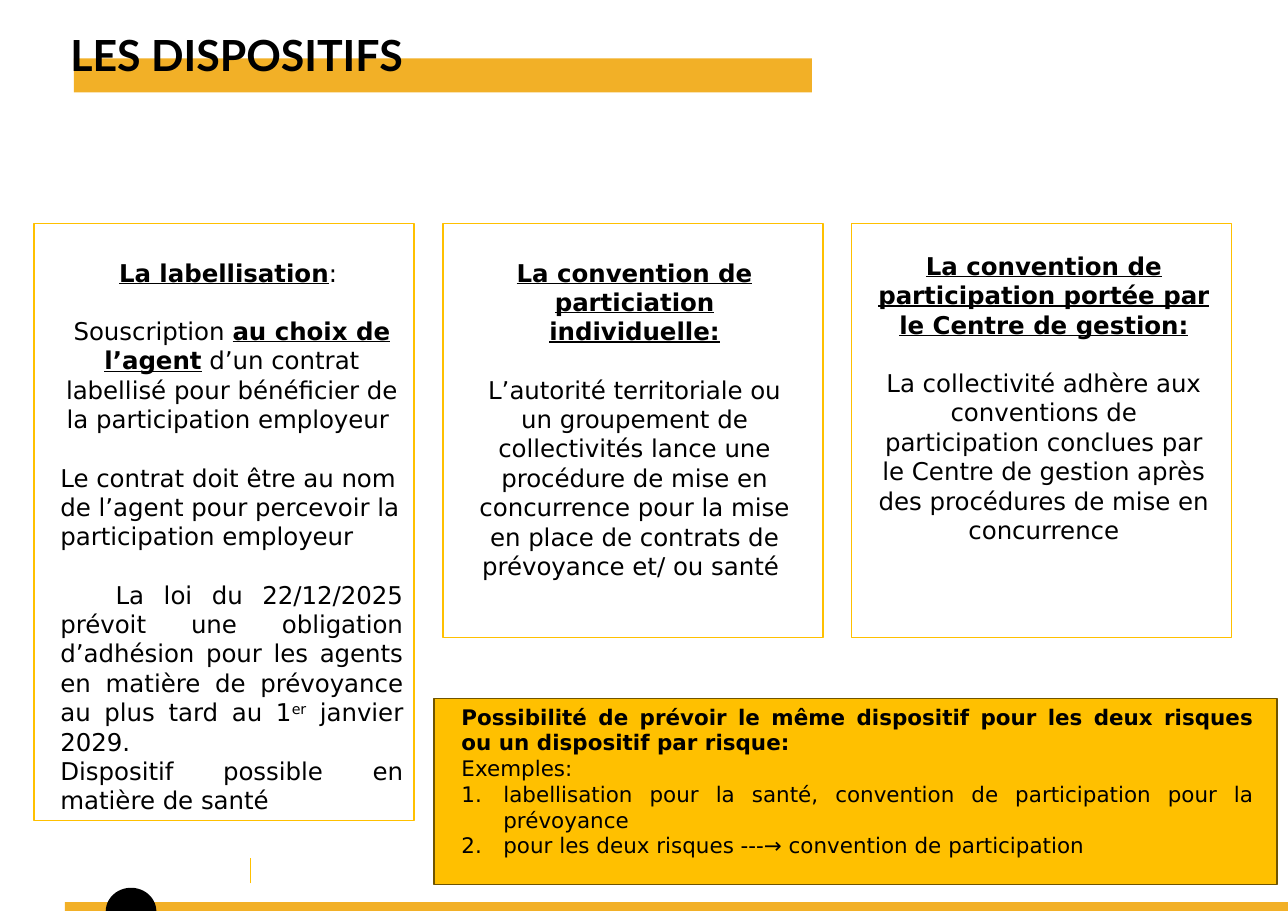
from lxml import etree
from pptx import Presentation
from pptx import util as u
from pptx.dml.color import RGBColor
from pptx.enum import shapes, text
from pptx.oxml.ns import qn

GOLD, AMBER, BLACK, WHITE = "F2B027", "FFC000", "000000", "FFFFFF"
HEAD = {"bold": True, "underline": True}
MID, FULL, LEFT = text.PP_ALIGN.CENTER, text.PP_ALIGN.JUSTIFY, text.PP_ALIGN.LEFT


def color(code):
    return RGBColor.from_string(code)


def apply(item, style):
    for key, value in style.items():
        setattr(item, key, value)


def stroke(line, code, width):
    line.color.rgb = color(code)
    line.width = u.Pt(width)


def add_block(slide, kind, box, fill, edge=None):
    block = slide.shapes.add_shape(kind, *map(u.Inches, box))
    block.shadow.inherit = False
    block.fill.solid()
    block.fill.fore_color.rgb = color(fill)
    if edge:
        stroke(block.line, edge, 1)
    else:
        block.line.fill.background()
    return block


def add_text(slide, box, paras, size, face="DejaVu Sans", pad=None):
    frame = slide.shapes.add_textbox(*map(u.Inches, box)).text_frame
    apply(frame, {"word_wrap": True, "auto_size": text.MSO_AUTO_SIZE.SHAPE_TO_FIT_TEXT})
    if pad:
        sides = ("left", "top", "right", "bottom")
        apply(frame, {f"margin_{side}": u.Inches(pad) for side in sides})
    for i, (align, runs, form) in enumerate(paras):
        para = frame.add_paragraph() if i else frame.paragraphs[0]
        props = para._p.get_or_add_pPr()
        if "indent" in form:
            props.set("indent", str(u.Inches(form["indent"])))
        if form.get("number"):
            props.set("marL", str(u.Inches(0.38)))
            props.set("indent", str(u.Inches(-0.38)))
            etree.SubElement(props, qn("a:buFont"), typeface="+mj-lt")
            etree.SubElement(props, qn("a:buAutoNum"), type="arabicPeriod")
        para.alignment = align
        if "gap" in form:
            para.space_before = u.Pt(form["gap"])
        for words, style in runs:
            run = para.add_run()
            run.text = words
            apply(run.font, {"name": face, "size": u.Pt(size), **style})
            run.font.color.rgb = color(BLACK)
            if words == "er":
                run._r.get_or_add_rPr().set("baseline", "30000")


def add_footer(slide, left, top):
    add_block(slide, shapes.MSO_SHAPE.RECTANGLE, (left, top, 11.1, 0.08), GOLD)
    dome = add_block(slide, shapes.MSO_SHAPE.CHORD,
                     (left + 0.37, top - 0.13, 0.46, 0.43), BLACK)
    dome.adjustments[0], dome.adjustments[1] = 108.37, 215.49
    x = u.Inches(left + 1.68)
    tick = slide.shapes.add_connector(shapes.MSO_CONNECTOR.STRAIGHT, x,
                                      u.Inches(top - 0.17), x, u.Inches(top - 0.4))
    stroke(tick.line, AMBER, 0.75)
    etree.SubElement(tick._element.spPr, qn("a:effectLst"))


def add_title(slide, left, top, words):
    add_block(slide, shapes.MSO_SHAPE.RECTANGLE, (left + 0.13, top + 0.37, 6.7, 0.31), GOLD)
    add_text(slide, (left, top, 7.09, 0.67), [(LEFT, [(words, {"bold": True})], {})],
             28, "Lato", 0.1)


def add_card(slide, box, inner, paras):
    add_block(slide, shapes.MSO_SHAPE.RECTANGLE, box, WHITE, AMBER)
    dx, dy, width, height = inner
    add_text(slide, (box[0] + dx, box[1] + dy, width, height), paras, 16)


def add_note(slide, box, paras):
    add_block(slide, shapes.MSO_SHAPE.RECTANGLE, box, AMBER, "705400")
    left, top, width, height = box
    add_text(slide, (left + 0.15, top, width - 0.26, height - 0.18), paras, 14)


def main():
    deck = Presentation()
    deck.slide_width, deck.slide_height = u.Inches(11.69), u.Inches(8.27)
    slide = deck.slides.add_slide(deck.slide_layouts[6])
    gap = {"gap": 19}
    label = [
        (MID, [("La labellisation", HEAD), (": ", {})], {}),
        (MID, [("Souscription ", {}), ("au choix de l’agent", HEAD),
               (" d’un contrat labellisé pour bénéficier de la participation employeur ", {})], gap),
        (LEFT, [("Le contrat doit être au nom de l’agent pour percevoir la "
                 "participation employeur", {})], gap),
        (FULL, [("La loi du 22/12/2025 prévoit une obligation d’adhésion pour les agents "
                 "en matière de prévoyance au plus tard au 1", {}),
                ("er", {}), (" janvier 2029. ", {})], {"gap": 19, "indent": 0.5}),
        (FULL, [("Dispositif possible en matière de santé ", {})], {}),
    ]
    single = [
        (MID, [("La convention de particiation individuelle:", HEAD)], {}),
        (MID, [("L’autorité territoriale ou un groupement de collectivités lance une procédure "
                "de mise en concurrence pour la mise en place de contrats de prévoyance "
                "et/ ou santé ", {})], gap),
    ]
    shared = [
        (MID, [("La convention de participation portée par le Centre de gestion:", HEAD)], {}),
        (MID, [("La collectivité adhère aux conventions de participation conclues par le Centre "
                "de gestion après des procédures de mise en concurrence", {})], gap),
    ]
    note = [
        (FULL, [("Possibilité de prévoir le même dispositif pour les deux risques ou un "
                 "dispositif par risque:", {"bold": True})], {}),
        (FULL, [("Exemples:", {})], {}),
        (FULL, [("labellisation pour la santé, convention de participation pour la "
                 "prévoyance ", {})], {"number": True}),
        (FULL, [("pour les deux risques ---→ convention de participation", {})],
         {"number": True}),
    ]
    add_footer(slide, 0.59, 8.19)
    add_title(slide, 0.54, 0.16, "LES DISPOSITIFS")
    cards = [
        (5.42, (0.14, 0.26, 3.31, 5.22), label),
        (3.76, (0.14, 0.26, 3.2, 3.37), single),
        (3.76, (0.13, 0.2, 3.23, 3.1), shared),
    ]
    for i, (height, inner, paras) in enumerate(cards):
        add_card(slide, (0.31 + 3.71 * i, 2.03, 3.45, height), inner, paras)
    add_note(slide, (3.94, 6.34, 7.65, 1.69), note)
    deck.save("out.pptx")


if __name__ == "__main__":
    main()
